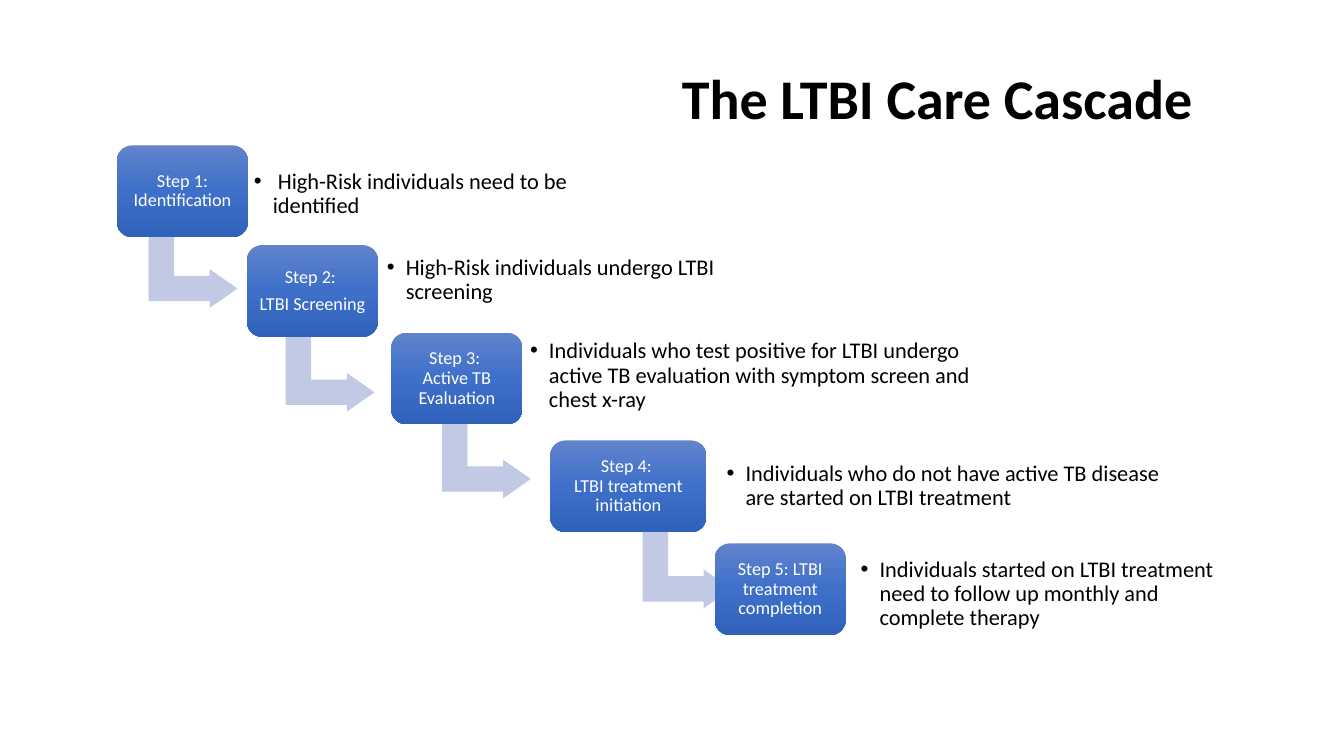
from copy import deepcopy
from dataclasses import dataclass

from lxml import etree
from pptx import Presentation
from pptx.dml.color import RGBColor
from pptx.enum.shapes import MSO_SHAPE
from pptx.enum.text import MSO_ANCHOR, PP_ALIGN
from pptx.oxml.ns import qn
from pptx.shapes.autoshape import Shape
from pptx.slide import Slide
from pptx.text.text import TextFrame, _Paragraph
from pptx.util import Pt

ROUNDED = MSO_SHAPE.ROUNDED_RECTANGLE
BENT_ARROW = MSO_SHAPE.BENT_UP_ARROW
MIDDLE = MSO_ANCHOR.MIDDLE
LEFT, CENTER = PP_ALIGN.LEFT, PP_ALIGN.CENTER

BLACK = RGBColor(0x00, 0x00, 0x00)
WHITE = RGBColor(0xFF, 0xFF, 0xFF)
ARROW_BLUE = RGBColor(0xC1, 0xC9, 0xE4)
BOX_GRADIENT = (
    (0, RGBColor(0x61, 0x83, 0xCB)),
    (0.5, RGBColor(0x3E, 0x70, 0xCA)),
    (1, RGBColor(0x30, 0x62, 0xBB)),
)

FONT = "Calibri"
BOX_HEIGHT = 65.5
ARROW_WIDTH, ARROW_HEIGHT = 55.4, 63.4
BULLET_INDENT = 13.5


@dataclass(frozen=True)
class Area:
    left: float
    top: float
    width: float
    height: float

    def lengths(self) -> tuple[Pt, Pt, Pt, Pt]:
        return Pt(self.left), Pt(self.top), Pt(self.width), Pt(self.height)


@dataclass(frozen=True)
class Step:
    labels: tuple[str, ...]
    box: Area
    label_gap: float
    detail: str
    detail_area: Area
    detail_gap: float
    arrow: tuple[float, float] | None = None  # left and top before rotation


STEPS = (
    Step(("Step 1: Identification",), Area(83.5, 103.8, 93.6, BOX_HEIGHT), 5,
         " High-Risk individuals need to be identified",
         Area(176.4, 112.3, 288.7, 52.6), 2.4, (110.2, 160.6)),
    Step(("Step 2: ", "LTBI Screening"), Area(176.4, 175, 93.6, BOX_HEIGHT), 5,
         "High-Risk individuals undergo LTBI screening",
         Area(271.4, 174.2, 283.7, 52.6), 2.4, (208.1, 234.7)),
    Step(("Step 3: ", "Active TB Evaluation"), Area(279.5, 237.6, 93.6, BOX_HEIGHT), 0,
         "Individuals who test positive for LTBI undergo active TB evaluation "
         "with symptom screen and chest x-ray",
         Area(373.7, 231.8, 329, 73.4), 2.4, (319.7, 296.6)),
    Step(("Step 4: ", "LTBI treatment initiation"), Area(393, 314.6, 111.6, BOX_HEIGHT), 0,
         "Individuals who do not have active TB disease are started on LTBI treatment",
         Area(514.1, 321.1, 328.3, 52.6), 0, (463, 375.1)),
    Step(("Step 5: LTBI treatment completion",), Area(510.5, 388.1, 93.6, BOX_HEIGHT), 0,
         "Individuals started on LTBI treatment need to follow up monthly and "
         "complete therapy",
         Area(609.8, 398.2, 272.9, 52.6), 0),
)


def prepare_frame(frame: TextFrame, inset: float) -> None:
    frame.word_wrap = True
    frame.vertical_anchor = MIDDLE
    frame.margin_left = frame.margin_right = Pt(inset)
    frame.margin_top = frame.margin_bottom = Pt(inset)


def write_paragraph(paragraph: _Paragraph, text: str, size: float, color: RGBColor,
                    alignment: PP_ALIGN = LEFT, gap: float = 0,
                    bold: bool = False) -> None:
    paragraph.alignment = alignment
    paragraph.line_spacing = 0.9
    paragraph.space_after = Pt(gap)
    run = paragraph.add_run()
    run.text = text
    run.font.name = FONT
    run.font.size = Pt(size)
    run.font.bold = bold
    run.font.color.rgb = color


def add_bullet(paragraph: _Paragraph) -> None:
    properties = paragraph._p.get_or_add_pPr()
    properties.set("marL", str(Pt(BULLET_INDENT)))
    properties.set("indent", str(-Pt(BULLET_INDENT)))
    etree.SubElement(properties, qn("a:buFont")).set("typeface", "Arial")
    etree.SubElement(properties, qn("a:buChar")).set("char", "•")


def fill_with_gradient(shape: Shape) -> None:
    shape.fill.gradient()
    shape.fill.gradient_angle = 270
    stop_list = shape._element.spPr.find(".//" + qn("a:gsLst"))
    stop_list.append(deepcopy(stop_list[0]))
    for stop, (position, color) in zip(shape.fill.gradient_stops, BOX_GRADIENT):
        stop.position = position
        stop.color.rgb = color


def add_plain_shape(slide: Slide, kind: MSO_SHAPE, area: Area) -> Shape:
    shape = slide.shapes.add_shape(kind, *area.lengths())
    shape.shadow.inherit = False
    shape.line.fill.background()
    return shape


def add_title(slide: Slide, text: str) -> None:
    frame = slide.shapes.add_textbox(*Area(480, 43.2, 480, 58.3).lengths()).text_frame
    prepare_frame(frame, 7.2)
    write_paragraph(frame.paragraphs[0], text, 40, BLACK, bold=True)


def add_arrow(slide: Slide, left: float, top: float) -> None:
    arrow = add_plain_shape(slide, BENT_ARROW, Area(left, top, ARROW_WIDTH, ARROW_HEIGHT))
    arrow.rotation = 90
    for index, value in enumerate((0.328, 0.25, 0.358)):
        arrow.adjustments[index] = value
    arrow.fill.solid()
    arrow.fill.fore_color.rgb = ARROW_BLUE


def add_step(slide: Slide, step: Step) -> None:
    if step.arrow:
        add_arrow(slide, *step.arrow)

    # Step box with its label
    box = add_plain_shape(slide, ROUNDED, step.box)
    fill_with_gradient(box)
    prepare_frame(box.text_frame, 3.6)
    for index, label in enumerate(step.labels):
        paragraph = box.text_frame.add_paragraph() if index else box.text_frame.paragraphs[0]
        write_paragraph(paragraph, label, 13, WHITE, CENTER, step.label_gap)

    # Bulleted explanation
    detail = slide.shapes.add_textbox(*step.detail_area.lengths()).text_frame
    prepare_frame(detail, 5)
    write_paragraph(detail.paragraphs[0], step.detail, 16, BLACK, gap=step.detail_gap)
    add_bullet(detail.paragraphs[0])


def main() -> None:
    presentation = Presentation()
    presentation.slide_width, presentation.slide_height = Pt(960), Pt(540)
    slide = presentation.slides.add_slide(presentation.slide_layouts[6])
    add_title(slide, "The LTBI Care Cascade")
    for step in STEPS:
        add_step(slide, step)
    presentation.save("out.pptx")


if __name__ == "__main__":
    main()
